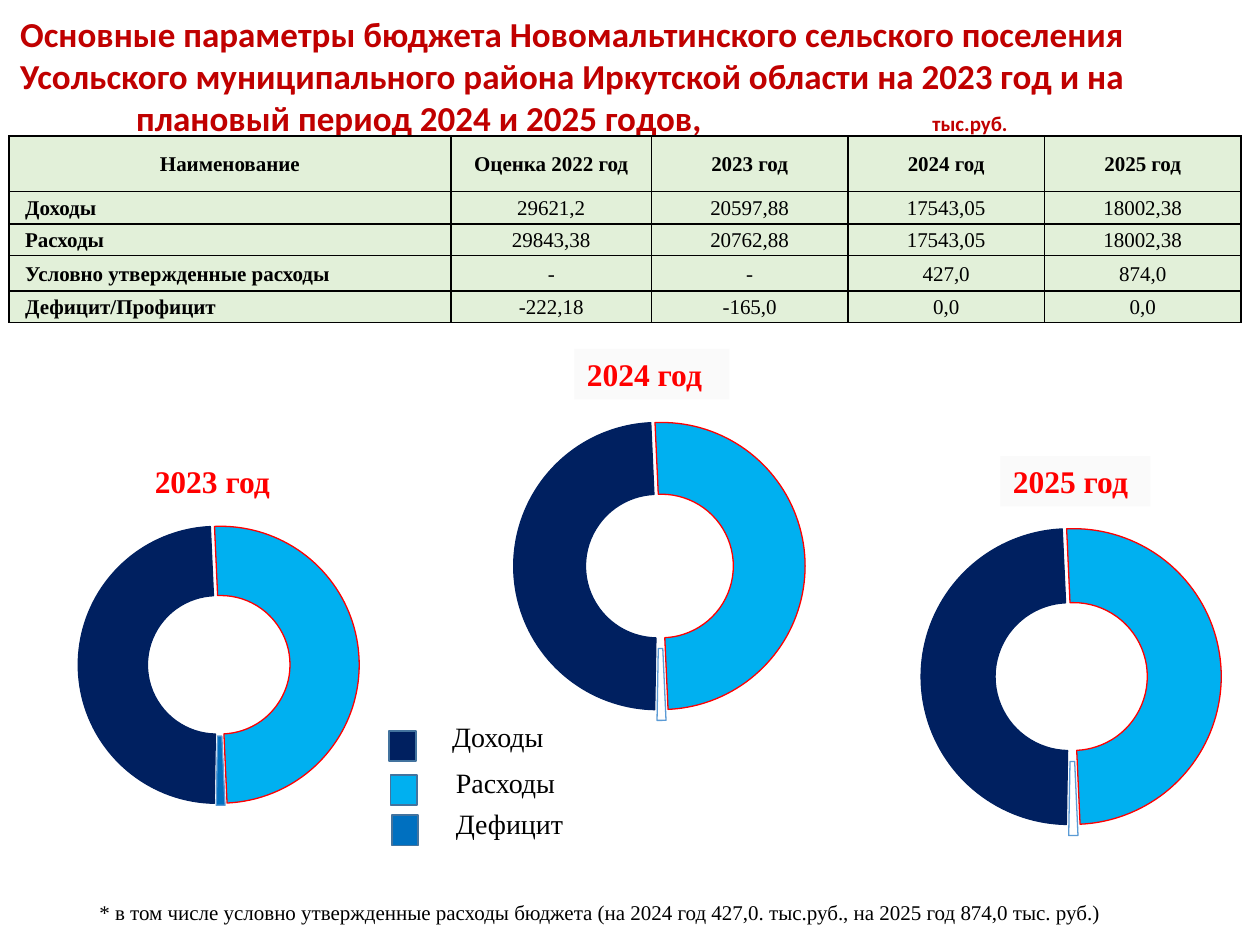
from lxml import etree
from pptx import Presentation
from pptx.chart.data import CategoryChartData
from pptx.dml.color import RGBColor
from pptx.enum.chart import XL_CHART_TYPE
from pptx.enum.shapes import MSO_SHAPE
from pptx.enum.text import MSO_ANCHOR, MSO_AUTO_SIZE, PP_ALIGN
from pptx.oxml import parse_xml
from pptx.oxml.ns import nsdecls, qn
from pptx.util import Inches, Pt

COLORS = {"title": "C00000", "label": "FF0000", "text": "000000", "cell": "E2F0D9",
          "income": "002060", "expense": "00B0F0", "deficit": "0070C0",
          "thin": "5B9BD5", "key": "43739E", "pale": "FAFAFA", "white": "FFFFFF"}
SERIF = "Times New Roman"

TITLE = ("Основные параметры бюджета Новомальтинского сельского поселения "
         "Усольского муниципального района Иркутской области на 2023 год и на")
TITLE_END, UNIT = "плановый период 2024 и 2025 годов,", "тыс.руб."
TITLE_TABS = (0.92, 7.24)
TABLE = [
    ("Наименование", "Оценка 2022 год", "2023 год", "2024 год", "2025 год"),
    ("Доходы", "29621,2", "20597,88", "17543,05", "18002,38"),
    ("Расходы", "29843,38", "20762,88", "17543,05", "18002,38"),
    ("Условно утвержденные расходы", "-", "-", "427,0", "874,0"),
    ("Дефицит/Профицит", "-222,18", "-165,0", "0,0", "0,0"),
]
COLUMNS = (3.51, 1.59, 1.56, 1.56, 1.56)
ROWS = (0.44, 0.26, 0.25, 0.28, 0.25)
SHARES = (49, 50, 1)
# place, inner plot area, colour and explosion of the deficit slice
RINGS = [
    ((0, 3.8, 3.32, 3), (0.187, 0.12, 0.672, 0.745), "deficit", 3),
    ((3.7, 2.89, 2.97, 3.32), (0.104, 0.061, 0.825, 0.844), None, 15),
    ((6.72, 3.43, 3.19, 3.52), (0.163, 0.193, 0.791, 0.717), None, 15),
]
YEARS = [("2023 год", (1.13, 3.62, 1.19, 0.4), "white"),
         ("2024 год", (4.56, 2.77, 1.23, 0.4), "pale"),
         ("2025 год", (7.94, 3.62, 1.19, 0.4), "pale")]
# name, colour, key corner, text corner
LEGEND = [("Доходы", "income", (3.09, 5.8), (3.49, 5.66)),
          ("Расходы", "expense", (3.1, 6.15), (3.52, 6.03)),
          ("Дефицит", "deficit", (3.11, 6.47), (3.52, 6.35))]
NOTE = ("* в том числе условно утвержденные расходы бюджета "
        "(на 2024 год 427,0. тыс.руб., на 2025 год 874,0 тыс. руб.)")


def color(name):
    return RGBColor.from_string(COLORS[name])


def style(font, size, name="text", bold=False, face=SERIF):
    font.size, font.name, font.bold = Pt(size), face, bold
    font.color.rgb = color(name)


def write(shape, text, size, name="text", bold=False):
    frame = shape.text_frame
    frame.word_wrap = True
    frame.auto_size = MSO_AUTO_SIZE.SHAPE_TO_FIT_TEXT
    para = frame.paragraphs[0]
    para.text, para.alignment = text, PP_ALIGN.LEFT
    style(para.font, size, name, bold)


def add_box(slide, place, fill, line=None):
    box = slide.shapes.add_shape(MSO_SHAPE.RECTANGLE, *map(Inches, place))
    box.shadow.inherit = False
    box.fill.solid()
    box.fill.fore_color.rgb = color(fill)
    if line:
        box.line.color.rgb = color(line)
        box.line.width = Pt(1)
    else:
        box.line.fill.background()
    return box


def add_text(slide, place, text, size):
    box = slide.shapes.add_textbox(*map(Inches, place))
    write(box, text, size)


def explosion(value):
    return parse_xml(f'<c:explosion {nsdecls("c")} val="{value}"/>')


def add_ring(slide, place, area, deficit, offset):
    data = CategoryChartData()
    data.categories = ("1", "2", "3")
    data.add_series("Series 1", SHARES)
    chart = slide.shapes.add_chart(XL_CHART_TYPE.DOUGHNUT, *map(Inches, place), data).chart
    chart.has_title = chart.has_legend = False
    style(chart.font, 18, face="Calibri")
    plot = chart.plots[0]
    plot.vary_by_categories = True
    series = plot.series[0]
    slices = (("income", "income", 3), ("expense", "label", 3), (deficit, "thin", offset))
    for index, (fill, line, _) in enumerate(slices):
        look = series.points[index].format
        if fill:
            look.fill.solid()
            look.fill.fore_color.rgb = color(fill)
        else:
            look.fill.background()
        look.line.color.rgb = color(line)
        look.line.width = Pt(0.75)

    # Explosion, rotation, hole and inner layout have no public methods
    points = series._element.findall(qn("c:dPt"))
    points[0].addprevious(explosion(offset))
    for point, (_, _, distance) in zip(points, slices):
        point.find(qn("c:spPr")).addprevious(explosion(distance))
    ring = plot._element
    ring.find(qn("c:firstSliceAng")).set("val", "181")
    ring.find(qn("c:holeSize")).set("val", "50")
    plot_area = ring.getparent()
    for old in plot_area.findall(qn("c:layout")):
        plot_area.remove(old)
    parts = [("layoutTarget", "inner"), ("xMode", "edge"), ("yMode", "edge")]
    parts += zip("xywh", area)
    inner = "".join(f'<c:{tag} val="{value}"/>' for tag, value in parts)
    plot_area.insert(0, parse_xml(
        f'<c:layout {nsdecls("c")}><c:manualLayout>{inner}</c:manualLayout></c:layout>'))


def add_borders(cell):
    props = cell._tc.get_or_add_tcPr()
    for index, side in enumerate(("lnL", "lnR", "lnT", "lnB")):
        props.insert(index, parse_xml(
            f'<a:{side} {nsdecls("a")} w="12700"><a:solidFill>'
            f'<a:srgbClr val="{COLORS["text"]}"/></a:solidFill></a:{side}>'))


def add_budget_table(slide):
    place = (0.07, 1.08, sum(COLUMNS), sum(ROWS))
    table = slide.shapes.add_table(len(ROWS), len(COLUMNS), *map(Inches, place)).table
    for column, width in zip(table.columns, COLUMNS):
        column.width = Inches(width)
    for row, height, values in zip(table.rows, ROWS, TABLE):
        row.height = Inches(height)
        header = values is TABLE[0]
        for index, (cell, text) in enumerate(zip(row.cells, values)):
            name = index == 0 and not header
            cell.fill.solid()
            cell.fill.fore_color.rgb = color("cell")
            cell.vertical_anchor = MSO_ANCHOR.MIDDLE
            cell.margin_left = Inches(0.13 if name else 0.01)
            cell.margin_right = cell.margin_top = Inches(0.01)
            cell.margin_bottom = 0
            para = cell.text_frame.paragraphs[0]
            para.text = text
            para.alignment = PP_ALIGN.LEFT if name else PP_ALIGN.CENTER
            style(para.font, 12, bold=header or name)
            add_borders(cell)


def set_title(slide):
    title = slide.shapes.title
    title.left, title.top, title.width, title.height = map(Inches, (0, 0.05, 9.09, 1.11))
    frame = title.text_frame
    frame.word_wrap, frame.auto_size = True, MSO_AUTO_SIZE.NONE
    frame.vertical_anchor = MSO_ANCHOR.TOP
    frame.margin_left, frame.margin_right = Inches(0.16), 0
    para = frame.paragraphs[0]
    para.alignment = PP_ALIGN.LEFT
    tabs = etree.SubElement(para._p.get_or_add_pPr(), qn("a:tabLst"))
    for stop in TITLE_TABS:
        etree.SubElement(tabs, qn("a:tab"), pos=str(Inches(stop)), algn="l")
    style(para.font, 20, "title", True, "Calibri")
    para.add_run().text = TITLE
    para.add_line_break()
    para.add_run().text = f"\t{TITLE_END}\t"
    unit = para.add_run()
    unit.text, unit.font.size = UNIT, Pt(12)


def main():
    deck = Presentation()
    deck.slide_width, deck.slide_height = Inches(10), Inches(7.5)
    page = deck.slides.add_slide(deck.slide_layouts[5])
    set_title(page)
    # Doughnuts with their year labels
    for ring in RINGS:
        add_ring(page, *ring)
    for year, place, fill in YEARS:
        write(add_box(page, place, fill), year, 18, "label", True)
    # Shared legend and footnote
    for name, fill, key, corner in LEGEND:
        add_box(page, (*key, 0.21, 0.24), fill, "key")
        add_text(page, (*corner, 1.48, 0.37), name, 16)
    add_text(page, (0.69, 7.09, 8.96, 0.3), NOTE, 12)
    add_budget_table(page)
    deck.save("out.pptx")


if __name__ == "__main__":
    main()
